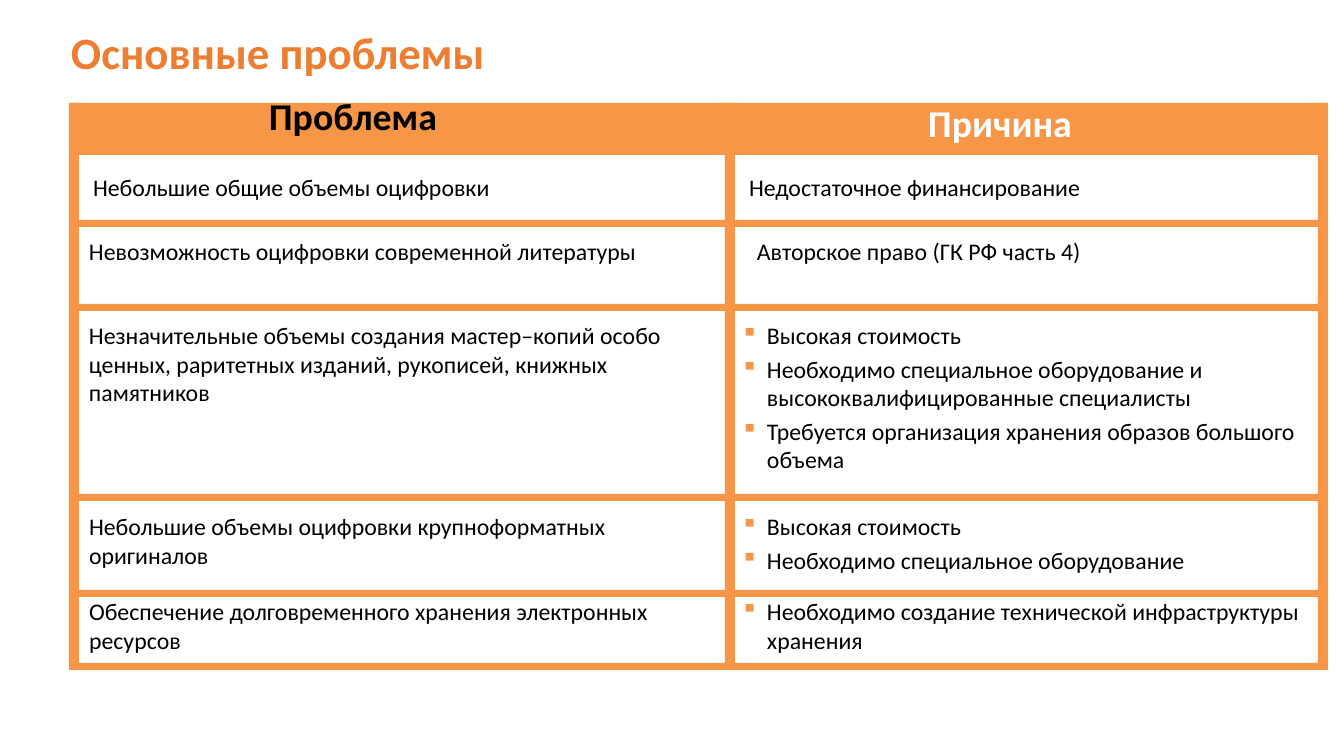
from lxml.etree import SubElement
from pptx import Presentation
from pptx.dml.color import RGBColor
from pptx.enum.shapes import MSO_SHAPE
from pptx.enum.text import MSO_ANCHOR, PP_ALIGN
from pptx.oxml.ns import qn
from pptx.util import Pt

ORANGE = RGBColor(0xF7, 0x96, 0x46)
RUST = RGBColor(0xED, 0x7D, 0x31)
BLACK = RGBColor(0, 0, 0)
WHITE = RGBColor(255, 255, 255)
SCALE = 914400 / 100.8


def px(num):
    return round(num * SCALE)


class Board:
    font = "Calibri"
    size = 17

    def __init__(self, slide):
        self.slide = slide

    def bar(self, x, y, w, h):
        shape = self.slide.shapes.add_shape(
            MSO_SHAPE.RECTANGLE, px(x), px(y), px(w), px(h))
        shape.shadow.inherit = False
        shape.fill.solid()
        shape.fill.fore_color.rgb = ORANGE
        shape.line.fill.background()

    def text(self, x, y, w, h, lines, size=size, color=BLACK, bold=False,
             left=0, hang=0, mark=False, align=None, lead=None,
             pad=(13, 7), anchor=MSO_ANCHOR.TOP):
        frame = self.slide.shapes.add_textbox(px(x), px(y), px(w), px(h)).text_frame
        frame.word_wrap = True
        frame.vertical_anchor = anchor
        frame.margin_left = frame.margin_right = px(pad[0])
        frame.margin_top = frame.margin_bottom = px(pad[1])
        for num, line in enumerate(lines):
            para = frame.add_paragraph() if num else frame.paragraphs[0]
            prop = para._p.get_or_add_pPr()
            prop.set("marL", str(px(left)))
            prop.set("indent", str(px(hang)))
            if mark:
                tint = SubElement(prop, qn("a:buClr"))
                SubElement(tint, qn("a:srgbClr")).set("val", str(ORANGE))
                SubElement(prop, qn("a:buChar")).set("char", "▪")
            if num:
                para.space_before = Pt(size * 0.2)
            if align is not None:
                para.alignment = align
            if lead:
                para.line_spacing = lead
            run = para.add_run()
            run.text = line
            run.font.name = self.font
            run.font.size = Pt(size)
            run.font.bold = bold
            run.font.color.rgb = color


def main():
    deck = Presentation()
    deck.slide_width, deck.slide_height = px(1344), px(756)
    board = Board(deck.slides.add_slide(deck.slide_layouts[6]))

    board.bar(69, 103, 1259, 52)
    for y in (220, 304, 494, 590, 663):
        board.bar(69, y, 1259, 7)
    for x in (69, 725, 1318):
        board.bar(x, 103, 10, 560)

    board.text(58, 0, 1210, 103, ["Основные проблемы"], size=32, color=RUST,
               bold=True, anchor=MSO_ANCHOR.MIDDLE)
    board.text(259, 93, 285, 63, ["Проблема"], size=27, bold=True, left=25,
               hang=-25, align=PP_ALIGN.JUSTIFY, lead=0.9, pad=(10, 5))
    board.text(915, 93, 285, 63, ["Причина"], size=27, color=WHITE, bold=True,
               left=50, hang=-50, align=PP_ALIGN.JUSTIFY)

    board.text(80, 166, 603, 52, ["Небольшие общие объемы оцифровки"],
               left=50, hang=-50)
    board.text(736, 166, 518, 52, ["Недостаточное финансирование"],
               left=50, hang=-50, align=PP_ALIGN.JUSTIFY)

    issues = [
        (230, 624, 77, "Невозможность оцифровки современной литературы"),
        (314, 709, 106, "Незначительные объемы создания мастер–копий особо "
                        "ценных, раритетных изданий, рукописей, книжных памятников"),
        (505, 687, 106, "Небольшие объемы оцифровки крупноформатных оригиналов"),
        (590, 687, 85, "Обеспечение долговременного хранения электронных ресурсов"),
    ]
    for y, w, h, line in issues:
        board.text(26, y, w, h, [line], left=50)

    board.text(694, 230, 529, 77, ["Авторское право (ГК РФ часть 4)"], left=50)
    causes = [
        (314, 106, ["Высокая стоимость",
                    "Необходимо специальное оборудование и "
                    "высококвалифицированные специалисты",
                    "Требуется организация хранения образов большого объема"]),
        (505, 106, ["Высокая стоимость", "Необходимо специальное оборудование"]),
        (590, 116, ["Необходимо создание технической инфраструктуры хранения"]),
    ]
    for y, h, lines in causes:
        board.text(704, y, 624, h, lines, left=50, hang=-26, mark=True)

    deck.save("out.pptx")


if __name__ == "__main__":
    main()
